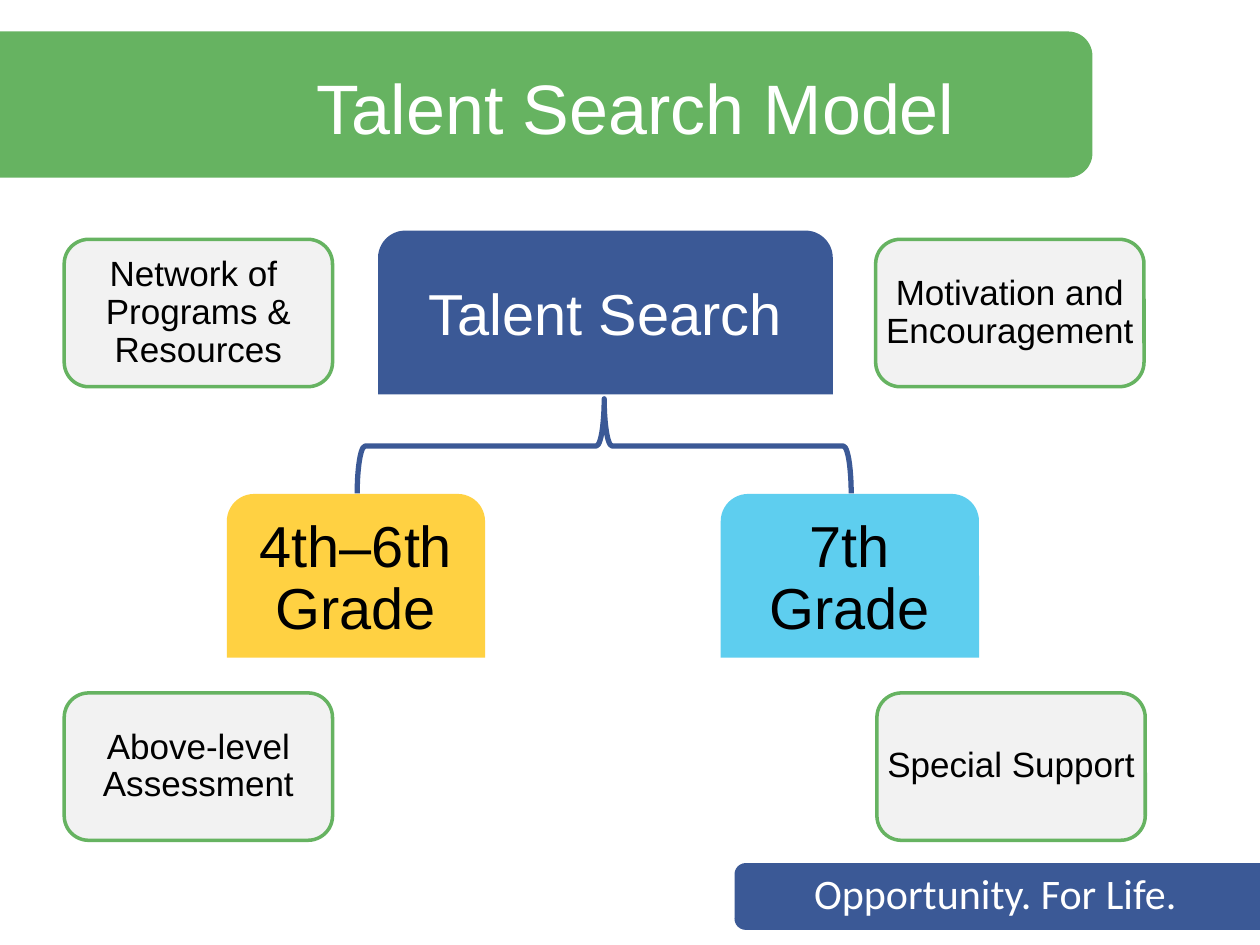
import pptx
import pptx.util
import pptx.dml.color
import pptx.enum.shapes
import pptx.enum.text
import pptx.oxml.ns
import lxml.etree

COLORS = {"green": "66B361", "blue": "3B5996", "sky": "4DC9EE", "gold": "FFCC2E",
          "card": "F2F2F2", "white": "FFFFFF", "black": "000000"}
RGB = {name: pptx.dml.color.RGBColor.from_string(code) for name, code in COLORS.items()}
SHAPE = pptx.enum.shapes.MSO_SHAPE

deck = pptx.Presentation()
deck.slide_width = pptx.util.Inches(10)
deck.slide_height = pptx.util.Inches(7.5)
slide = deck.slides.add_slide(deck.slide_layouts[5])
shapes = slide.shapes


def add_block(kind, x, y, w, h, fill=None, line=None, line_pt=1, turn=0):
    """Add a shape that covers x, y, w, h (percent of the slide) once turned."""
    left, width = (int(deck.slide_width * share / 100) for share in (x, w))
    top, height = (int(deck.slide_height * share / 100) for share in (y, h))
    if turn:
        left, top = left + (width - height) // 2, top + (height - width) // 2
        width, height = height, width
    block = shapes.add_shape(kind, left, top, width, height)
    block.rotation = turn
    block.shadow.inherit = False
    if fill:
        block.fill.solid()
        block.fill.fore_color.rgb = RGB[fill]
    else:
        block.fill.background()
    if line:
        block.line.color.rgb = RGB[line]
        block.line.width = pptx.util.Pt(line_pt)
    else:
        block.line.fill.background()
    return block


def write(holder, text, size, color, font="Arial", spacing=0.9, inset=0.0):
    """Fill a shape with one centred paragraph."""
    frame = holder.text_frame
    frame.word_wrap = True
    frame.auto_size = pptx.enum.text.MSO_AUTO_SIZE.NONE
    frame.vertical_anchor = pptx.enum.text.MSO_ANCHOR.MIDDLE
    frame.margin_left = frame.margin_right = pptx.util.Inches(inset)
    frame.margin_top = frame.margin_bottom = pptx.util.Inches(inset)
    frame.text = text
    paragraph = frame.paragraphs[0]
    paragraph.alignment = pptx.enum.text.PP_ALIGN.CENTER
    paragraph.line_spacing = spacing
    paragraph.font.size = pptx.util.Pt(size)
    paragraph.font.name = font
    paragraph.font.color.rgb = RGB[color]


# Header and footer bands, rounded on their inner ends
add_block(SHAPE.ROUND_2_SAME_RECTANGLE, 0, 3.33, 86.7, 15.47, "green", turn=90)
add_block(SHAPE.ROUND_2_SAME_RECTANGLE, 58.3, 91.33, 41.7, 7.07, "blue", turn=270)
slogan = shapes.add_textbox(int(deck.slide_width * 0.63), int(deck.slide_height * 0.91),
                            int(deck.slide_width * 0.32), int(deck.slide_height * 0.07))
write(slogan, "Opportunity. For Life.", 24, "white", "Calibri", 1.0)

# Title, brought in front of the header band
title = shapes.title
title.left, title.width = int(deck.slide_width * 0.142), int(deck.slide_width * 0.725)
title.top, title.height = int(deck.slide_height * 0.065), int(deck.slide_height * 0.11)
write(title, "Talent Search Model", 40, "white", spacing=0.85, inset=0.05)
shapes._spTree.append(title._element)

# Talent search and its two grade groups
for text, x, y, w, fill, ink, opacity in (
        ("Talent Search", 30, 24.4, 36.1, "blue", "white", 100),
        ("7th Grade", 57.2, 52.27, 20.5, "sky", "black", 90),
        ("4th–6th Grade", 18, 52.27, 20.5, "gold", "black", 90)):
    group = add_block(SHAPE.ROUND_2_SAME_RECTANGLE, x, y, w, 17.33, fill)
    write(group, text, 33, ink, inset=0.1)
    if opacity < 100:
        tint = group._element.spPr.find(".//" + pptx.oxml.ns.qn("a:srgbClr"))
        lxml.etree.SubElement(tint, pptx.oxml.ns.qn("a:alpha"), val=str(opacity * 1000))

# Brace joining the search to the grades
add_block(SHAPE.LEFT_BRACE, 28.35, 42.2, 39.2, 10, line="blue", line_pt=3, turn=90)

# Corner cards
for text, x, y in (
        ("Motivation and Encouragement", 69.5, 25.33),
        ("Above-level\vAssessment", 5.1, 73.33),
        ("Special Support", 69.6, 73.33),
        ("Network of \vPrograms & Resources", 5.1, 25.33)):
    card = add_block(SHAPE.ROUNDED_RECTANGLE, x, y, 21.3, 15.6, "card", "green", 2)
    write(card, text, 20, "black")

deck.save("out.pptx")
